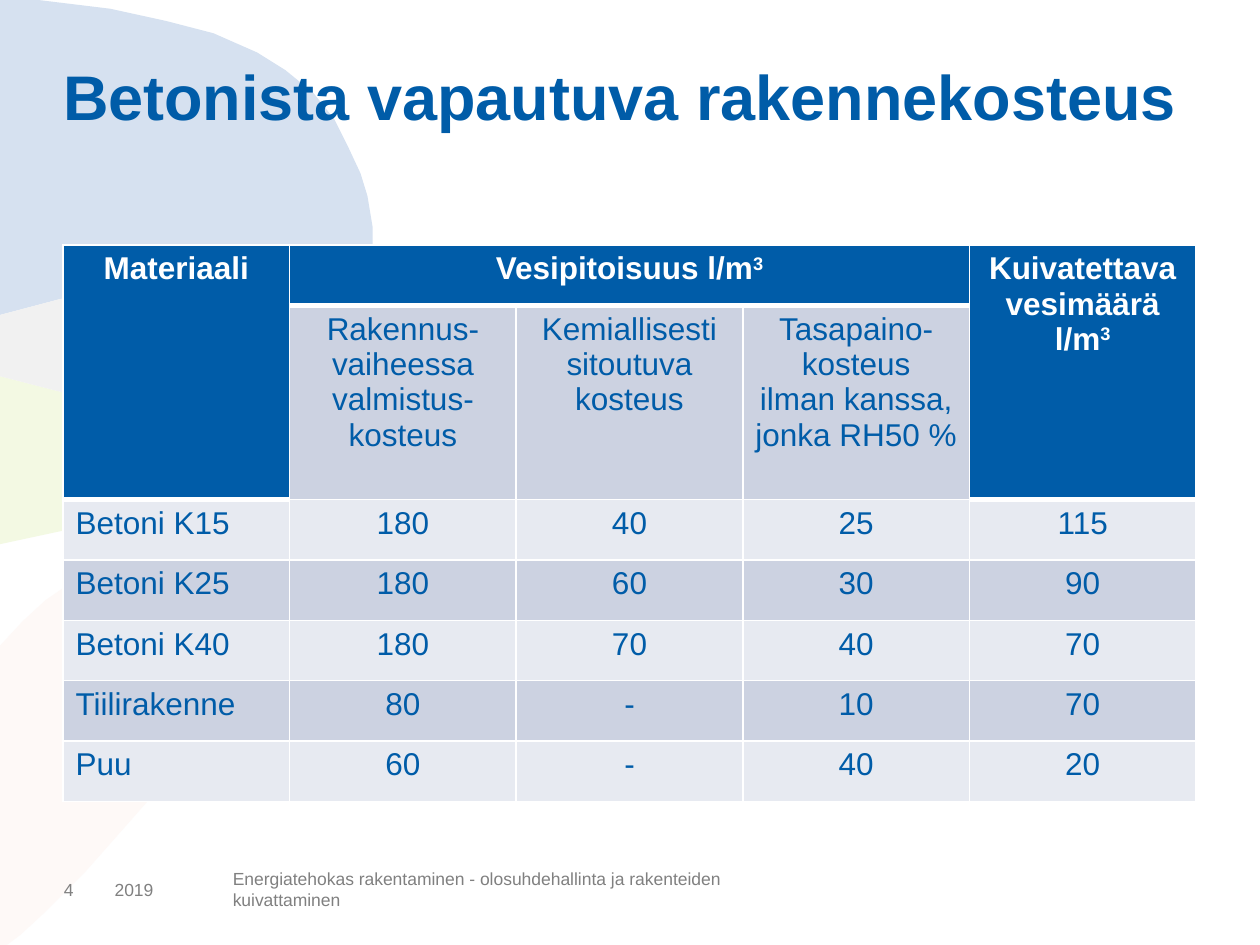
from dataclasses import dataclass

from lxml import etree
from pptx import Presentation
from pptx.dml.color import RGBColor
from pptx.enum.text import MSO_ANCHOR, MSO_AUTO_SIZE, PP_ALIGN
from pptx.oxml.ns import qn
from pptx.util import Pt

TOP, MIDDLE = MSO_ANCHOR.TOP, MSO_ANCHOR.MIDDLE
LEFT, CENTER, JUSTIFY = PP_ALIGN.LEFT, PP_ALIGN.CENTER, PP_ALIGN.JUSTIFY
NO_FIT = MSO_AUTO_SIZE.NONE
TITLE_ONLY = 5


@dataclass(frozen=True)
class Theme:
    """Colours, font and type sizes of the slide."""
    font: str = "Arial"
    blue: str = "005CA8"
    white: str = "FFFFFF"
    grey: str = "808080"
    band_dark: str = "CCD2E1"
    band_light: str = "E7EAF1"
    petal_blue: str = "D6E1F0"
    petal_grey: str = "F1F1F1"
    petal_green: str = "F3F9E3"
    petal_orange: str = "FEF9F7"
    title: int = 36
    body: int = 18
    footer: int = 10


THEME = Theme()

UPPER_SEAM = [(0, 180), (34, 170.6), (68, 164), (101.5, 159.6), (128, 158.4),
              (152, 160), (171.4, 163.4), (187, 169), (198, 175.5), (203.8, 180.7)]
LOWER_SEAM = [(203.8, 180.7), (198.7, 190), (190, 201), (180.7, 210), (167, 221),
              (152, 228), (132.5, 234.5), (112.3, 236.2), (89, 234.7),
              (59, 229.7), (31, 223.2), (0, 214.6)]
BLUE_EDGE = [(207.4, 173.5), (211, 162), (213.1, 149), (213.1, 129.6), (209.5, 112.3),
             (206, 99.4), (199.4, 84.2), (190.8, 68.4), (178.6, 53.3), (163.4, 39.6),
             (146.9, 29.5), (121.7, 18.7), (95, 11.5), (63.4, 5), (21.6, 0), (0, 0)]
GREEN_EDGE = [(0, 311), (42.5, 301.7), (82.8, 292.3), (111.6, 283.7), (139, 272.9),
              (163.4, 260), (183.6, 246.2), (198.7, 232.6), (209.5, 218.2),
              (213.8, 203.8), (210.2, 190.1)]
ORANGE_EDGE = [(100, 313.2), (82.8, 315.4), (64.1, 320.4), (45.4, 330.5), (26, 343.4),
               (13, 355), (0, 368.6), (0, 540), (4.3, 540), (12.2, 533.5),
               (25.2, 522), (49, 497.5), (72, 472.3), (93.6, 447), (112.3, 424),
               (126, 404.6), (138.2, 385), (146.2, 365), (149, 346.3), (147, 338.4),
               (143.3, 330.5), (134.6, 322.6), (121.7, 316.8), (111.6, 314)]
PETALS = [
    (THEME.petal_orange, ORANGE_EDGE),
    (THEME.petal_green, LOWER_SEAM + GREEN_EDGE),
    (THEME.petal_blue, UPPER_SEAM + BLUE_EDGE),
    (THEME.petal_grey, UPPER_SEAM + LOWER_SEAM[1:]),
]

ROWS = [
    ["Materiaali", "Vesipitoisuus l/m^3", None, None, "Kuivatettava vesimäärä l/m^3"],
    [None, "Rakennus-vaiheessa valmistus-kosteus", "Kemiallisesti sitoutuva kosteus",
     "Tasapaino-kosteus\nilman kanssa, jonka RH50 %", None],
    ["Betoni K15", "180", "40", "25", "115"],
    ["Betoni K25", "180", "60", "30", "90"],
    ["Betoni K40", "180", "70", "40", "70"],
    ["Tiilirakenne", "80", "-", "10", "70"],
    ["Puu", "60", "-", "40", "20"],
]
MERGES = [((0, 0), (1, 0)), ((0, 1), (0, 3)), ((0, 4), (1, 4))]
ROW_HEIGHTS = [34.5, 111] + [34.5] * 5
FOOTER = [
    (0, 28, "4"),
    (29, 67, "2019"),
    (96.5, 289.5, "Energiatehokas rakentaminen - olosuhdehallinta ja rakenteiden kuivattaminen"),
]


def format_paragraph(p, size, color, bold=False, align=LEFT):
    """Apply font and alignment to a paragraph."""
    p.alignment = align
    p.font.name, p.font.size, p.font.bold = THEME.font, Pt(size), bold
    p.font.color.rgb = RGBColor.from_string(color)


def set_frame(tf, anchor):
    """Give a text frame no margins, wrapping and an anchor."""
    tf.margin_left = tf.margin_top = tf.margin_right = tf.margin_bottom = 0
    tf.word_wrap, tf.auto_size, tf.vertical_anchor = True, NO_FIT, anchor


def add_petals(s, x, y):
    """Draw the background petals from the given corner."""
    for color, points in PETALS:
        start, *rest = [(x + px, y + py) for px, py in points]
        builder = s.shapes.build_freeform(*start, scale=Pt(1))
        builder.add_line_segments(rest, close=True)
        sp = builder.convert_to_shape()
        sp.shadow.inherit = False
        sp.fill.solid()
        sp.fill.fore_color.rgb = RGBColor.from_string(color)
        sp.line.fill.background()


def place_title(s, x, y, w, h):
    """Place the title above the petals."""
    sp = s.shapes.title
    s.shapes.element.append(sp.element)
    sp.left, sp.top, sp.width, sp.height = Pt(x), Pt(y), Pt(w), Pt(h)
    sp.text_frame.text = "Betonista vapautuva rakennekosteus"
    set_frame(sp.text_frame, TOP)
    p = sp.text_frame.paragraphs[0]
    p.line_spacing = 0.9
    format_paragraph(p, THEME.title, THEME.blue, bold=True)


def is_header(i, j):
    """Tell whether a cell belongs to the blue header."""
    return i == 0 or (i == 1 and j in (0, 4))


def set_borders(cell, top, bottom):
    """Draw white borders around a cell."""
    tc_pr = cell._tc.get_or_add_tcPr()
    for side, width in (("L", 1), ("R", 1), ("T", top), ("B", bottom)):
        ln = etree.SubElement(tc_pr, qn(f"a:ln{side}"), w=str(Pt(width)))
        fill = etree.SubElement(ln, qn("a:solidFill"))
        etree.SubElement(fill, qn("a:srgbClr"), val=THEME.white)


def fill_cell(cell, text, color, bold, align):
    """Write paragraphs in a cell, raising what follows a caret."""
    tf = cell.text_frame
    for k, line in enumerate(text.split("\n")):
        p = tf.add_paragraph() if k else tf.paragraphs[0]
        base, _, power = line.partition("^")
        p.add_run().text = base
        if power:
            r = p.add_run()
            r.text = power
            r.font._element.set("baseline", "30000")
        format_paragraph(p, THEME.body, color, bold, align)


def add_moisture_table(s, x, y, w):
    """Add the table of moisture by material."""
    n = len(ROWS[0])
    table = s.shapes.add_table(len(ROWS), n, Pt(x), Pt(y), Pt(w), Pt(sum(ROW_HEIGHTS))).table
    table.first_row = table.horz_banding = False
    for col in table.columns:
        col.width = Pt(w / n)
    for row, height in zip(table.rows, ROW_HEIGHTS):
        row.height = Pt(height)
    for first, last in MERGES:
        table.cell(*first).merge(table.cell(*last))
    for i, row in enumerate(ROWS):
        for j, text in enumerate(row):
            cell, header = table.cell(i, j), is_header(i, j)
            band = THEME.band_dark if i % 2 else THEME.band_light
            set_borders(cell, 3 if i and is_header(i - 1, j) else 1, 3 if header else 1)
            cell.fill.solid()
            cell.fill.fore_color.rgb = RGBColor.from_string(THEME.blue if header else band)
            if text:
                fill_cell(cell, text, THEME.white if header else THEME.blue, header,
                          JUSTIFY if i > 1 and j == 0 else CENTER)


def add_footer(s, x, y, h):
    """Add the page number, year and footer text."""
    for dx, w, text in FOOTER:
        tf = s.shapes.add_textbox(Pt(x + dx), Pt(y), Pt(w), Pt(h)).text_frame
        tf.text = text
        set_frame(tf, MIDDLE)
        format_paragraph(tf.paragraphs[0], THEME.footer, THEME.grey)


def main():
    """Build and save the slide."""
    prs = Presentation()
    prs.slide_width, prs.slide_height = Pt(720), Pt(540)
    s = prs.slides.add_slide(prs.slide_layouts[TITLE_ONLY])
    add_petals(s, 0, 0)
    place_title(s, 36, 37.5, 648, 90.5)
    add_moisture_table(s, 36, 140, 647.5)
    add_footer(s, 36.5, 502.5, 11.5)
    prs.save("out.pptx")


if __name__ == "__main__":
    main()
